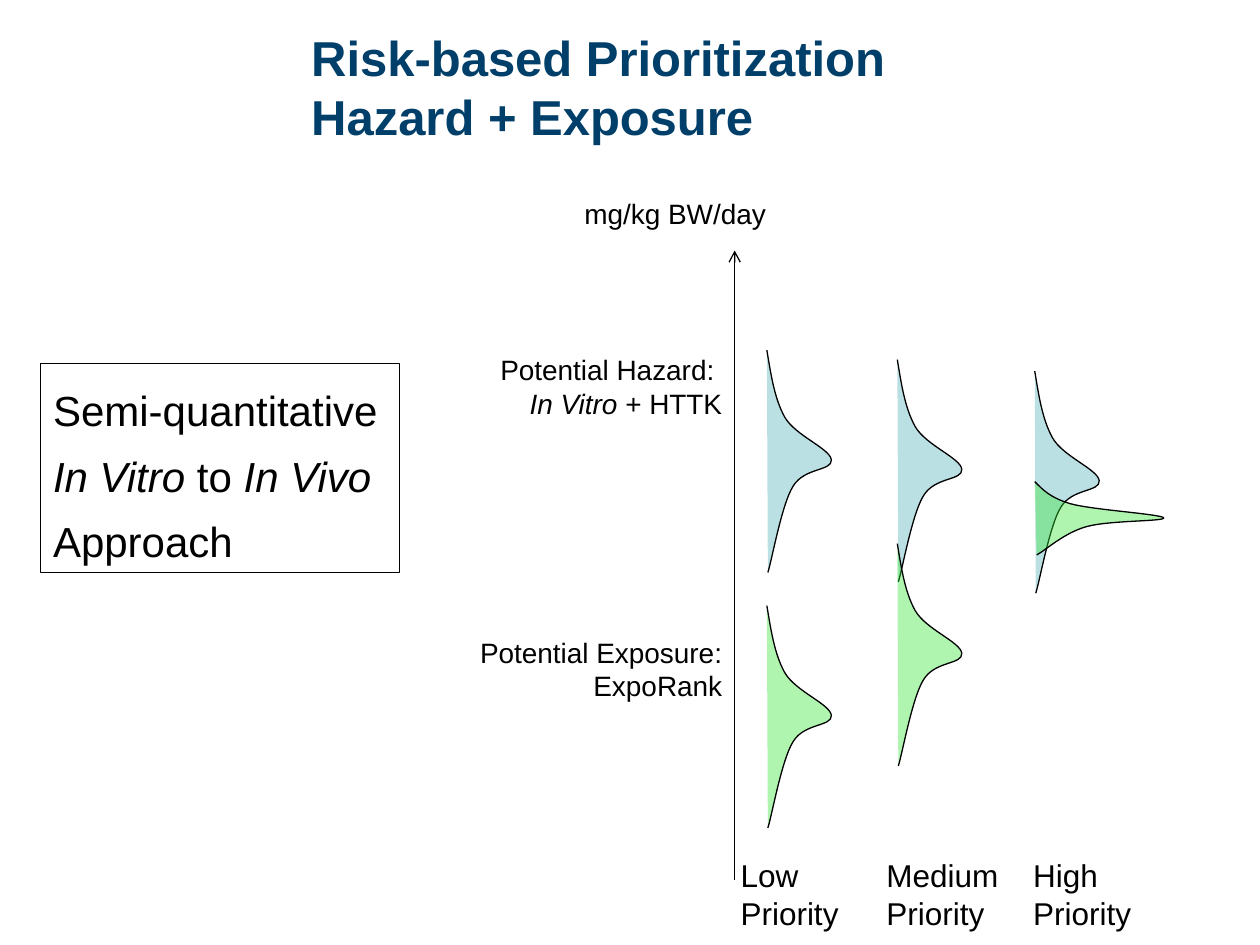
from lxml.etree import SubElement
from pptx import Presentation
from pptx.dml.color import RGBColor
from pptx.enum.shapes import MSO_CONNECTOR, MSO_SHAPE
from pptx.enum.text import MSO_ANCHOR, PP_ALIGN
from pptx.oxml.ns import qn
from pptx.util import Cm, Pt

BLACK = RGBColor(0x00, 0x00, 0x00)
NAVY = RGBColor(0x00, 0x3F, 0x69)
HAZARD_BLUE = RGBColor(0xBB, 0xE0, 0xE3)
EXPOSURE_GREEN = RGBColor(0x39, 0xE7, 0x39)


def write(box, lines, size, **para_format):
    """Write lines of (text, italic) spans into a shape."""
    frame = box.text_frame
    frame.word_wrap = True
    for index, line in enumerate(lines):
        para = frame.paragraphs[0] if index == 0 else frame.add_paragraph()
        for name, value in para_format.items():
            setattr(para, name, value)
        for text, italic in line:
            span = para.add_run()
            span.text = text
            span_format = {"name": "Arial", "size": Pt(size), "italic": italic}
            for name, value in span_format.items():
                setattr(span.font, name, value)
            span.font.color.rgb = BLACK


def add_curve(page, start, offsets, stretch):
    """Add an open outline of cubic curves, given as offsets in cm from start."""
    points = [tuple(Cm(start[axis] + stretch[axis] * offset[axis]) for axis in (0, 1))
              for offset in offsets]
    builder = page.shapes.build_freeform(Cm(start[0]), Cm(start[1]))
    builder.add_line_segments(points, close=False)
    curve = builder.convert_to_shape()
    # Every three straight segments become one cubic curve
    segments = list(curve._element.iter(qn("a:lnTo")))
    outline = segments[0].getparent()
    for first in range(0, len(segments), 3):
        cubic = SubElement(outline, qn("a:cubicBezTo"))
        for segment in segments[first:first + 3]:
            cubic.append(segment[0])
            outline.remove(segment)
    return curve


deck = Presentation()
deck.slide_width, deck.slide_height = Cm(25.4), Cm(19.05)
page = deck.slides.add_slide(deck.slide_layouts[5])

# Title
title = page.shapes.title
title_format = {"left": Cm(6.02), "top": Cm(1.19), "width": Cm(18.9), "height": Cm(1.09)}
for name, value in title_format.items():
    setattr(title, name, value)
title.text_frame.vertical_anchor = MSO_ANCHOR.MIDDLE
title.text_frame.text = "Risk-based Prioritization\vHazard + Exposure"
title_para = title.text_frame.paragraphs[0]
title_para.alignment = PP_ALIGN.LEFT
for span in title_para.runs:
    for name, value in {"name": "Arial", "size": Pt(28), "bold": True}.items():
        setattr(span.font, name, value)
    span.font.color.rgb = NAVY

# Distributions: one bell curve, reused in every column
BELL = [
    (0.08, 0.48), (0.15, 0.97), (0.36, 1.35),
    (0.58, 1.73), (1.27, 1.98), (1.30, 2.21),
    (1.32, 2.44), (0.76, 2.36), (0.53, 2.74),
    (0.30, 3.10), (0.10, 4.24), (0.02, 4.48),
]
FULL, NARROW = (1, 1), (2, 0.33)
distributions = [
    ((15.46, 7.06), HAZARD_BLUE, FULL),
    ((15.46, 12.21), EXPOSURE_GREEN, FULL),
    ((18.09, 7.25), HAZARD_BLUE, FULL),
    ((18.09, 10.96), EXPOSURE_GREEN, FULL),
    ((20.86, 7.48), HAZARD_BLUE, FULL),
    ((20.86, 9.71), EXPOSURE_GREEN, NARROW),
]
for start, color, stretch in distributions:
    curve = add_curve(page, start, BELL, stretch)
    curve.shadow.inherit = False
    curve.fill.solid()
    curve.fill.fore_color.rgb = color
    curve.line.color.rgb = BLACK
    curve.line.width = Pt(0.75)
    if color == EXPOSURE_GREEN:
        tint = curve._element.spPr.find(qn("a:solidFill"))[0]
        SubElement(tint, qn("a:alpha"), val="40000")

# Dose axis with an arrowhead at the top
axis = page.shapes.add_connector(MSO_CONNECTOR.STRAIGHT, Cm(14.81), Cm(17.73), Cm(14.81), Cm(5.05))
axis.line.color.rgb = BLACK
axis.line.width = Pt(0.75)
SubElement(axis._element.spPr.find(qn("a:ln")), qn("a:tailEnd"), type="arrow")
SubElement(axis._element.spPr, qn("a:effectLst"))

# Axis labels and priority labels
labels = [
    ((11.53, 3.84, 5.16, 1.12), 16, PP_ALIGN.LEFT, [[("mg/kg BW/day", False)]]),
    ((8.26, 6.99, 6.55, 1.96), 16, PP_ALIGN.RIGHT,
     [[("Potential Hazard: ", False)], [("In Vitro ", True), ("+ HTTK", False)]]),
    ((8.0, 12.68, 6.81, 1.96), 16, PP_ALIGN.RIGHT,
     [[("Potential Exposure:", False)], [("ExpoRank", False)]]),
]
for left, width, level in ((14.68, 3.23, "Low"), (17.62, 2.97, "Medium"), (20.58, 3.48, "High")):
    labels.append(((left, 17.13, width, 1.8), 18, PP_ALIGN.LEFT,
                   [[(level, False)], [("Priority", False)]]))
for place, size, alignment, lines in labels:
    box = page.shapes.add_textbox(*map(Cm, place))
    write(box, lines, size, alignment=alignment)

# Approach box
approach = page.shapes.add_shape(MSO_SHAPE.RECTANGLE, Cm(0.82), Cm(7.33), Cm(7.23), Cm(4.22))
approach.shadow.inherit = False
approach.fill.background()
approach.line.color.rgb = BLACK
approach.line.width = Pt(0.75)
approach.text_frame.vertical_anchor = MSO_ANCHOR.TOP
write(approach, [
    [("Semi-quantitative", False)],
    [("In Vitro ", True), ("to ", False), ("In Vivo", True)],
    [("Approach", False)],
], 24, alignment=PP_ALIGN.LEFT, line_spacing=1.3)

deck.save("out.pptx")
